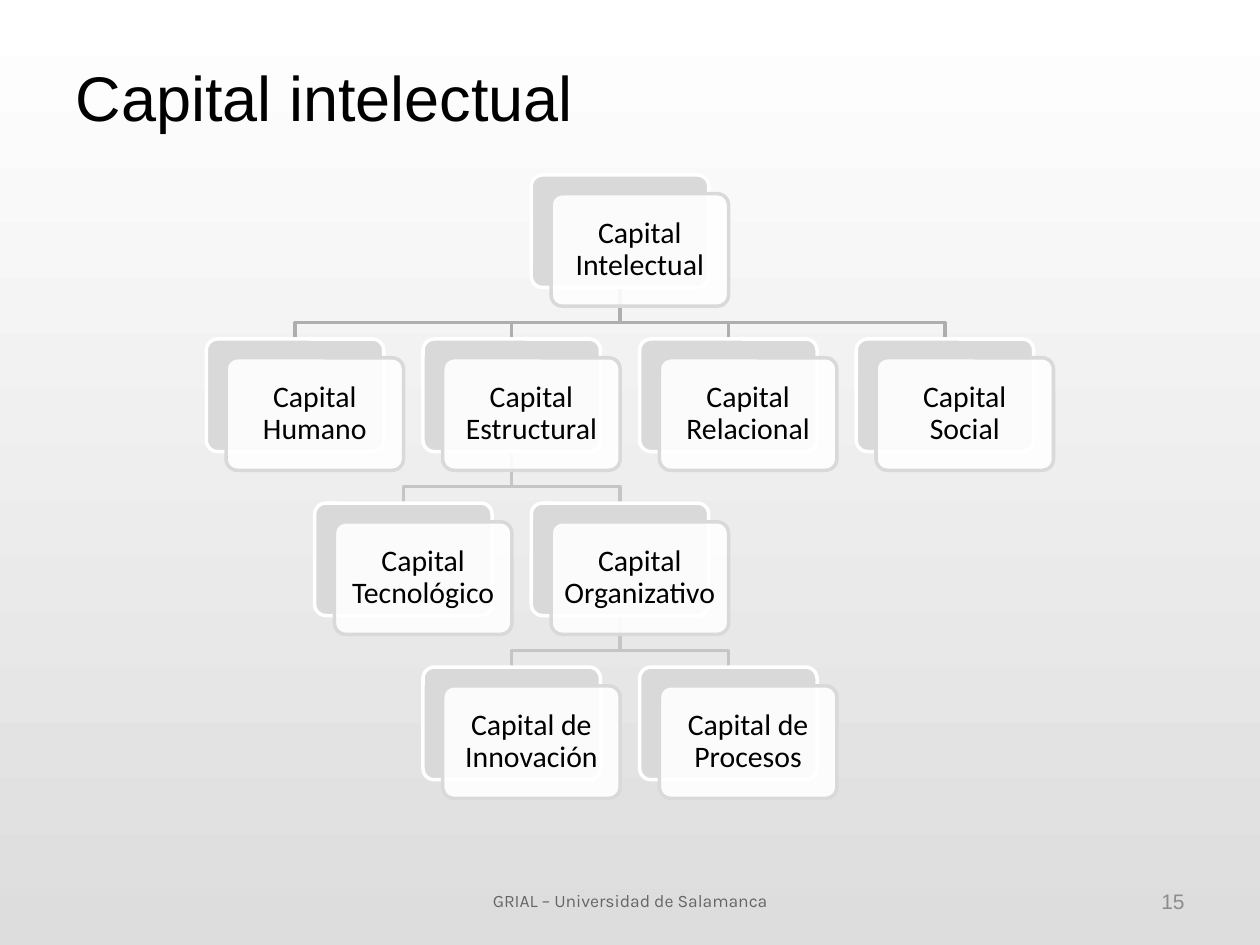
"""Build the organisation chart slide on intellectual capital."""
from dataclasses import dataclass

from lxml.etree import SubElement
from pptx import Presentation
from pptx.dml.color import RGBColor
from pptx.enum.shapes import MSO_SHAPE
from pptx.enum.text import MSO_ANCHOR, PP_ALIGN
from pptx.oxml.ns import qn
from pptx.util import Pt

TITLE = "Capital intelectual"
FOOTER = "GRIAL – Universidad de Salamanca"
NUMBER = "15"

# name: (text, parent, level, half columns from the root)
NODES = {
    "root": ("Capital Intelectual", None, 0, 0),
    "human": ("Capital Humano", "root", 1, -3),
    "structural": ("Capital Estructural", "root", 1, -1),
    "relational": ("Capital Relacional", "root", 1, 1),
    "social": ("Capital Social", "root", 1, 3),
    "technological": ("Capital Tecnológico", "structural", 2, -2),
    "organisational": ("Capital Organizativo", "structural", 2, 0),
    "innovation": ("Capital de Innovación", "organisational", 3, -1),
    "processes": ("Capital de Procesos", "organisational", 3, 1),
}

ROOT_CENTER, ROOT_TOP = 354.3, 100
HALF_COLUMN, ROW = 61.9, 93.75
CARD_WIDTH, CARD_HEIGHT = 101.4, 64.3
OFFSET_X, OFFSET_Y = 11.3, 10.7
BEND_GAP = 9.4


@dataclass(frozen=True)
class Theme:
    background: tuple = ("FFFFFF", "DDDDDD")
    ink: str = "000000"
    card: str = "FFFFFF"
    shade: str = "D9D9D9"
    links: tuple = ("AEAEAE", "C5C5C5", "C5C5C5")
    footer: str = "666666"
    number: str = "8C8C8C"
    heading_font: str = "Arial"
    card_font: str = "Calibri"
    footer_font: str = "Karla"
    title_size: int = 36
    card_size: int = 17
    footer_size: int = 10
    number_size: int = 12
    line_width: int = 2
    card_opacity: int = 90


THEME = Theme()


def color(value):
    return RGBColor.from_string(value)


def place(shape, left, top, width, height):
    shape.left, shape.top = Pt(left), Pt(top)
    shape.width, shape.height = Pt(width), Pt(height)


def write(shape, text, align, font, size, ink):
    frame = shape.text_frame
    frame.text = text
    frame.word_wrap = True
    frame.vertical_anchor = MSO_ANCHOR.MIDDLE
    para = frame.paragraphs[0]
    para.alignment = align
    span = para.runs[0].font
    span.name, span.size = font, Pt(size)
    span.color.rgb = color(ink)
    return frame


def outline(shape, value):
    shape.shadow.inherit = False
    shape.line.color.rgb = color(value)
    shape.line.width = Pt(THEME.line_width)


def position(name):
    text, parent, level, column = NODES[name]
    return ROOT_CENTER + column * HALF_COLUMN, ROOT_TOP + level * ROW


def add_link(page, name):
    text, parent, level, column = NODES[name]
    start_x, parent_top = position(parent)
    end_x, end_y = position(name)
    bend = end_y - BEND_GAP
    builder = page.shapes.build_freeform(Pt(start_x), Pt(parent_top + CARD_HEIGHT))
    corners = [(start_x, bend), (end_x, bend), (end_x, end_y)]
    builder.add_line_segments([(Pt(x), Pt(y)) for x, y in corners], close=False)
    link = builder.convert_to_shape()
    link.fill.background()
    outline(link, THEME.links[level - 1])


def add_box(page, left, top, fill, line):
    box = page.shapes.add_shape(
        MSO_SHAPE.ROUNDED_RECTANGLE, Pt(left), Pt(top), Pt(CARD_WIDTH), Pt(CARD_HEIGHT)
    )
    box.adjustments[0] = 0.1
    box.fill.solid()
    box.fill.fore_color.rgb = color(fill)
    outline(box, line)
    return box


def add_card(page, name):
    center, top = position(name)
    left = center - CARD_WIDTH / 2
    add_box(page, left, top, THEME.shade, THEME.card)
    card = add_box(page, left + OFFSET_X, top + OFFSET_Y, THEME.card, THEME.shade)
    fill = card.fill._xPr.find(qn("a:solidFill"))
    SubElement(fill[0], qn("a:alpha"), val=str(THEME.card_opacity * 1000))
    frame = write(card, NODES[name][0], PP_ALIGN.CENTER, THEME.card_font,
                  THEME.card_size, THEME.ink)
    frame.margin_left = frame.margin_right = Pt(5)
    frame.margin_top = frame.margin_bottom = Pt(5)
    frame.paragraphs[0].line_spacing = 0.9


def add_label(page, left, width, *style):
    box = page.shapes.add_textbox(Pt(left), Pt(500.5), Pt(width), Pt(28.75))
    write(box, *style)


def main():
    deck = Presentation()
    deck.slide_width, deck.slide_height = Pt(720), Pt(540)
    page = deck.slides.add_slide(deck.slide_layouts[5])

    backdrop = page.background.fill
    backdrop.gradient()
    backdrop.gradient_angle = 270
    for stop, value in zip(backdrop.gradient_stops, THEME.background):
        stop.color.rgb = color(value)

    title = page.shapes.title
    place(title, 36, 10, 463, 90)
    write(title, TITLE, PP_ALIGN.LEFT, THEME.heading_font, THEME.title_size, THEME.ink)

    for name, node in NODES.items():
        if node[1]:
            add_link(page, name)
    for name in NODES:
        add_card(page, name)

    add_label(page, 246, 228, FOOTER, PP_ALIGN.CENTER, THEME.footer_font,
              THEME.footer_size, THEME.footer)
    add_label(page, 516, 168, NUMBER, PP_ALIGN.RIGHT, THEME.heading_font,
              THEME.number_size, THEME.number)
    deck.save("out.pptx")


if __name__ == "__main__":
    main()
